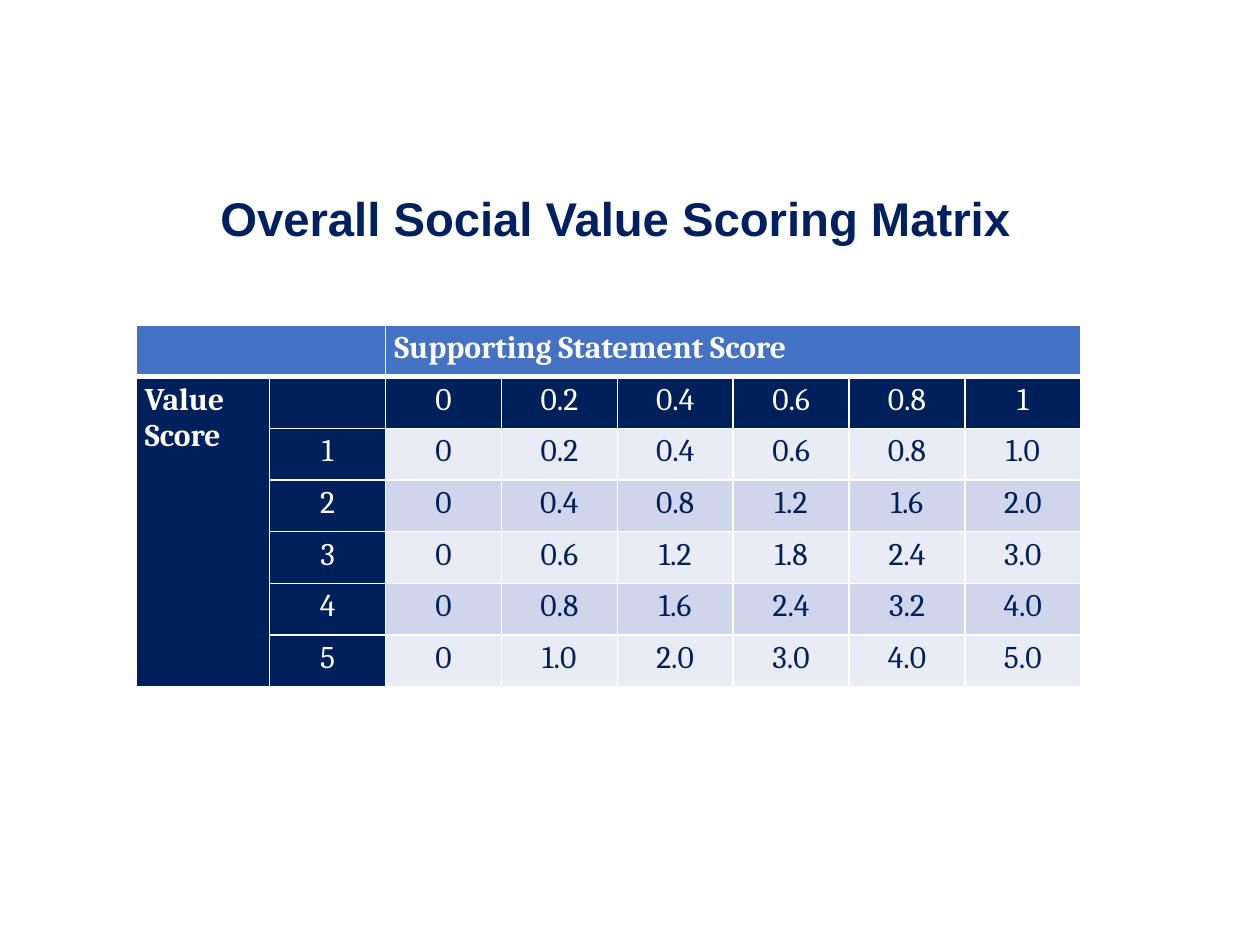
from pptx import Presentation
from pptx.dml.color import RGBColor
from pptx.enum.text import MSO_ANCHOR, PP_ALIGN
from pptx.oxml.ns import qn
from pptx.util import Inches, Pt
from lxml import etree

LEFT, CENTER = PP_ALIGN.LEFT, PP_ALIGN.CENTER
MIDDLE = MSO_ANCHOR.MIDDLE

# Content
TITLE = "Overall Social Value Scoring Matrix"
COLUMN_HEADING = "Supporting Statement Score"
ROW_HEADING = "Value Score"
STATEMENT_SCORES = ["0", "0.2", "0.4", "0.6", "0.8", "1"]
VALUE_SCORES = ["1", "2", "3", "4", "5"]

THEME = {
    "title_font": "Arial", "title_size": 27, "title_color": "002060",
    "table_font": "Cambria", "table_size": 18,
    "header": "4472C4", "navy": "00205B", "white": "FFFFFF",
    "bands": ["E9EBF5", "CFD5EA"],
    "thin": 1, "thick": 3,
}

# Layout in inches
TITLE_BOX = (1.65, 1.46, 9.48, 0.59)
TABLE_LEFT, TABLE_TOP = 1.08, 2.58
HEADING_WIDTH, COLUMN_WIDTH, ROW_HEIGHT = 1.06, 0.92, 0.41
ROWS, COLUMNS = len(VALUE_SCORES) + 2, len(STATEMENT_SCORES) + 2


def add_text(frame, text, font, size, color, bold=False, align=LEFT):
    paragraph = frame.paragraphs[0]
    paragraph.alignment = align
    run = paragraph.add_run()
    run.text = text
    run.font.name = font
    run.font.size = Pt(size)
    run.font.bold = bold
    run.font.color.rgb = RGBColor.from_string(color)
    return paragraph


def set_borders(cell, widths):
    properties = cell._tc.get_or_add_tcPr()
    for side, width in widths.items():
        line = etree.SubElement(properties, qn(f"a:ln{side}"), w=str(Pt(width)))
        fill = etree.SubElement(line, qn("a:solidFill"))
        etree.SubElement(fill, qn("a:srgbClr"), val=THEME["white"])


def fill_color(row, column):
    if row == 0:
        return THEME["header"]
    if row == 1 or column < 2:
        return THEME["navy"]
    return THEME["bands"][row % 2]


def product(value, score):
    return "0" if score == "0" else f"{float(value) * float(score):.1f}"


def write_cell(table, row, column, text, **style):
    color = THEME["navy"] if row > 1 and column > 1 else THEME["white"]
    add_text(table.cell(row, column).text_frame, text, THEME["table_font"],
             THEME["table_size"], color, **style)


presentation = Presentation()
presentation.slide_width, presentation.slide_height = Inches(10), Inches(7.5)
slide = presentation.slides.add_slide(presentation.slide_layouts[6])

# Title
title_frame = slide.shapes.add_textbox(*map(Inches, TITLE_BOX)).text_frame
title_frame.word_wrap = True
title_frame.vertical_anchor = MIDDLE
add_text(title_frame, TITLE, THEME["title_font"], THEME["title_size"],
         THEME["title_color"], bold=True).line_spacing = 0.9

# Table grid
widths = [HEADING_WIDTH] + [COLUMN_WIDTH] * (COLUMNS - 1)
table = slide.shapes.add_table(
    ROWS, COLUMNS, Inches(TABLE_LEFT), Inches(TABLE_TOP),
    Inches(sum(widths)), Inches(ROW_HEIGHT * ROWS)).table
for column, width in zip(table.columns, widths):
    column.width = Inches(width)
for row_index, row in enumerate(table.rows):
    row.height = Inches(ROW_HEIGHT)
    for column_index, cell in enumerate(row.cells):
        thin, thick = THEME["thin"], THEME["thick"]
        set_borders(cell, {"L": thin, "R": thin,
                           "T": thick if row_index == 1 else thin,
                           "B": thick if row_index == 0 else thin})
        cell.fill.solid()
        cell.fill.fore_color.rgb = RGBColor.from_string(
            fill_color(row_index, column_index))
        cell.margin_left = cell.margin_right = Inches(0.07)
        cell.margin_top = cell.margin_bottom = Inches(0.04)

# Headings
table.cell(0, 0).merge(table.cell(0, 1))
table.cell(0, 2).merge(table.cell(0, COLUMNS - 1))
table.cell(1, 0).merge(table.cell(ROWS - 1, 0))
write_cell(table, 0, 2, COLUMN_HEADING, bold=True)
write_cell(table, 1, 0, ROW_HEADING, bold=True)

# Scores and their products
for column, score in enumerate(STATEMENT_SCORES, 2):
    write_cell(table, 1, column, score, align=CENTER)
for row, value in enumerate(VALUE_SCORES, 2):
    write_cell(table, row, 1, value, align=CENTER)
    for column, score in enumerate(STATEMENT_SCORES, 2):
        write_cell(table, row, column, product(value, score), align=CENTER)

presentation.save("out.pptx")
